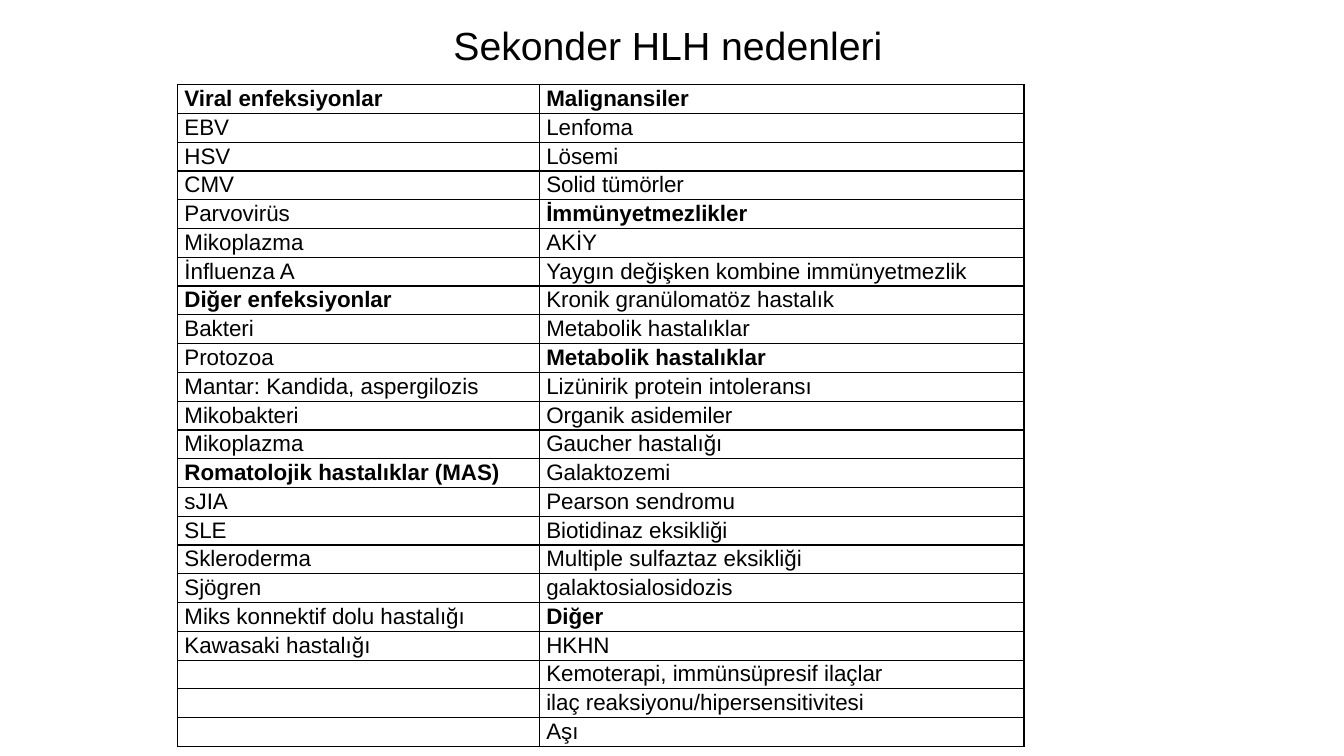
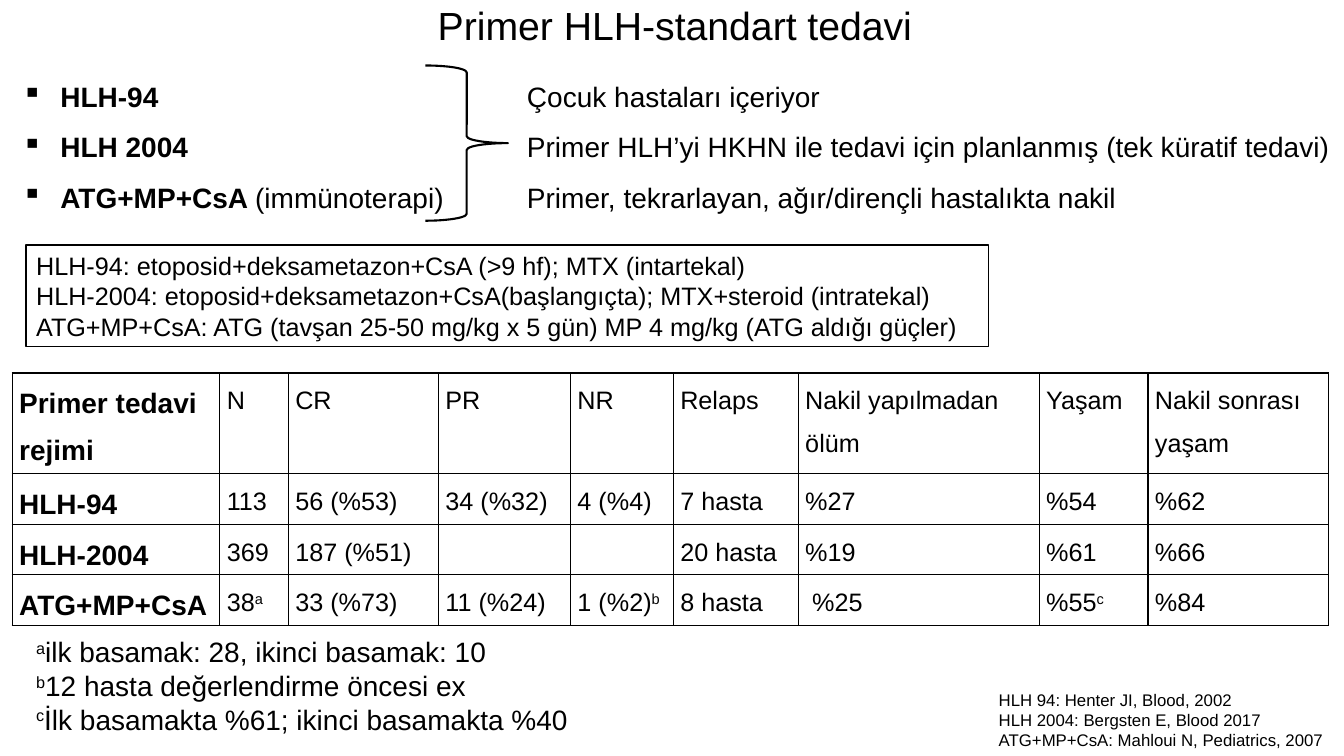
from dataclasses import dataclass
from itertools import zip_longest

from lxml.etree import SubElement
from pptx import Presentation
from pptx.dml.color import RGBColor
from pptx.enum.shapes import MSO_SHAPE
from pptx.enum.text import MSO_ANCHOR, PP_ALIGN
from pptx.oxml.ns import qn
from pptx.util import Pt

LEFT, MID = PP_ALIGN.LEFT, PP_ALIGN.CENTER
TOP, HALF = MSO_ANCHOR.TOP, MSO_ANCHOR.MIDDLE
RECT, BRACE = MSO_SHAPE.RECTANGLE, MSO_SHAPE.RIGHT_BRACE
SCALE = 9144


@dataclass(frozen=True)
class Theme:
    ink: str = "000000"
    back: str = "FFFFFF"
    font: str = "Arial"
    title: int = 28
    large: int = 20
    body: int = 18
    list: int = 16
    small: int = 12
    line: float = 1
    bold: float = 1.5
    tight: float = 1.07
    wide: float = 1.5


THEME = Theme()


def px(num):
    return int(num * SCALE)


def tint(code):
    return RGBColor.from_string(code)


def write(frame, text, size, align=LEFT, space=None, mark=None):
    frame.word_wrap = True
    for num, line in enumerate(text.split("\n")):
        para = frame.add_paragraph() if num else frame.paragraphs[0]
        para.alignment = align
        if space:
            para.line_spacing = space
        if mark:
            props = para._p.get_or_add_pPr()
            props.set("marL", str(px(38)))
            props.set("indent", str(px(-38)))
            SubElement(props, qn("a:buChar"), char=mark)
        for odd, part in enumerate(line.split("*")):
            for high, piece in enumerate(part.split("^")):
                if not piece:
                    continue
                run = para.add_run()
                run.text = piece
                font = run.font
                font.name, font.size = THEME.font, Pt(size)
                font.bold = odd % 2 == 1
                font.color.rgb = tint(THEME.ink)
                if high % 2:
                    font._element.set("baseline", "30000")
        if not line:
            SubElement(para._p, qn("a:endParaRPr"), sz=str(size * 100))


class Deck:
    def __init__(self, theme):
        self.theme = theme
        self.file = Presentation()
        self.file.slide_width, self.file.slide_height = px(1333.33), px(750)
        self.slide = None

    def page(self, title, box):
        self.slide = self.file.slides.add_slide(self.file.slide_layouts[6])
        self.text(box, title, self.theme.title, align=MID)

    def text(self, box, text, size, **form):
        frame = self.slide.shapes.add_textbox(*map(px, box)).text_frame
        frame.vertical_anchor = TOP
        write(frame, text, size, **form)

    def shape(self, kind, box, width, fill=None):
        shape = self.slide.shapes.add_shape(kind, *map(px, box))
        shape.shadow.inherit = False
        if fill:
            shape.fill.solid()
            shape.fill.fore_color.rgb = tint(fill)
        else:
            shape.fill.background()
        shape.line.color.rgb = tint(self.theme.ink)
        shape.line.width = Pt(width)
        return shape

    def panel(self, box, text, size):
        frame = self.shape(RECT, box, self.theme.line, self.theme.back).text_frame
        frame.vertical_anchor = HALF
        write(frame, text, size)

    def frame(self, cell):
        props = cell._tc.get_or_add_tcPr()
        for spot, side in enumerate("LRTB"):
            line = SubElement(props, qn(f"a:ln{side}"), w=str(Pt(self.theme.line)))
            fill = SubElement(line, qn("a:solidFill"))
            SubElement(fill, qn("a:srgbClr"), val=self.theme.ink)
            props.insert(spot, line)

    def grid(self, spot, cols, highs, rows, size, lead, space):
        box = (*spot, sum(cols), sum(highs))
        table = self.slide.shapes.add_table(
            len(rows), len(cols), *map(px, box)).table
        table.first_row = table.horz_banding = False
        for col, wide in zip(table.columns, cols):
            col.width = px(wide)
        for row, high, texts in zip(table.rows, highs, rows):
            row.height = px(high)
            for num, (cell, text) in enumerate(zip(row.cells, texts)):
                cell.margin_left = cell.margin_right = px(7)
                cell.margin_top = cell.margin_bottom = 0
                cell.fill.background()
                self.frame(cell)
                write(cell.text_frame, text, size if num else lead, space=space)


CAUSES = [
    "*Viral enfeksiyonlar*", "EBV", "HSV", "CMV", "Parvovirüs", "Mikoplazma",
    "İnfluenza A", "*Diğer enfeksiyonlar*", "Bakteri", "Protozoa",
    "Mantar: Kandida, aspergilozis", "Mikobakteri", "Mikoplazma",
    "*Romatolojik hastalıklar (MAS)*", "sJIA", "SLE", "Skleroderma", "Sjögren",
    "Miks konnektif dolu hastalığı", "Kawasaki hastalığı",
]
OTHERS = [
    "*Malignansiler*", "Lenfoma", "Lösemi", "Solid tümörler",
    "*İmmünyetmezlikler*", "AKİY", "Yaygın değişken kombine immünyetmezlik",
    "Kronik granülomatöz hastalık", "Metabolik hastalıklar",
    "*Metabolik hastalıklar*", "Lizünirik protein intoleransı",
    "Organik asidemiler", "Gaucher hastalığı", "Galaktozemi",
    "Pearson sendromu", "Biotidinaz eksikliği", "Multiple sulfaztaz eksikliği",
    "galaktosialosidozis", "*Diğer*", "HKHN",
    "Kemoterapi, immünsüpresif ilaçlar", "ilaç reaksiyonu/hipersensitivitesi",
    "Aşı",
]
TRIALS = [
    ["*Primer tedavi rejimi*", "N", "CR", "PR", "NR", "Relaps",
     "Nakil yapılmadan ölüm", "Yaşam", "Nakil sonrası yaşam"],
    ["*HLH-94*", "113", "56 (%53)", "34 (%32)", "4 (%4)", "7 hasta",
     "%27", "%54", "%62"],
    ["*HLH-2004*", "369", "187 (%51)", "", "", "20 hasta",
     "%19", "%61", "%66"],
    ["*ATG+MP+CsA*", "38^a^", "33 (%73)", "11 (%24)", "1 (%2)^b^", "8 hasta",
     " %25", "%55^c^", "%84"],
]
PLANS = "*HLH-94*\n*HLH 2004*\n*ATG+MP+CsA *(immünoterapi)"
AIMS = """Çocuk hastaları içeriyor
Primer HLH’yi HKHN ile tedavi için planlanmış (tek küratif tedavi)
Primer, tekrarlayan, ağır/dirençli hastalıkta nakil"""
DRUGS = """HLH-94: etoposid+deksametazon+CsA (>9 hf); MTX (intartekal)
HLH-2004: etoposid+deksametazon+CsA(başlangıçta); MTX+steroid (intratekal)
ATG+MP+CsA: ATG (tavşan 25-50 mg/kg x 5 gün) MP 4 mg/kg (ATG aldığı güçler)"""
NOTES = """^a^ilk basamak: 28, ikinci basamak: 10
^b^12 hasta değerlendirme öncesi ex
^c^İlk basamakta %61; ikinci basamakta %40"""
REFS = """HLH 94: Henter JI, Blood, 2002
HLH 2004: Bergsten E, Blood 2017
ATG+MP+CsA: Mahloui N, Pediatrics, 2007"""


def causes(deck):
    look = deck.theme
    deck.page("Sekonder HLH nedenleri", (10, 16, 1305, 57))
    rows = list(zip_longest(CAUSES, OTHERS, fillvalue=""))
    highs = [656 / len(rows)] * len(rows)
    deck.grid((176, 84), (359, 481), highs, rows,
              look.list, look.list, look.tight)


def care(deck):
    look = deck.theme
    deck.page("Primer HLH-standart tedavi", (26, -4, 1287, 57))
    deck.text((26, 625, 900, 111), NOTES, look.large)
    deck.text((981, 679, 352, 71), REFS, look.small)
    deck.panel((26, 243, 955, 101), DRUGS, look.body)
    deck.text((12, 57, 480, 162), PLANS, look.large, space=look.wide, mark="▪")
    deck.grid((12, 370), (206, 68, 149, 131, 102, 124, 239, 108, 179),
              (100, 50, 50, 50), TRIALS, look.body, look.large, look.wide)
    deck.text((513, 57, 820, 162), AIMS, look.large, space=look.wide)
    deck.shape(BRACE, (422, 65, 82, 154), look.bold)


def main():
    deck = Deck(THEME)
    causes(deck)
    care(deck)
    deck.file.save("out.pptx")


if __name__ == "__main__":
    main()
